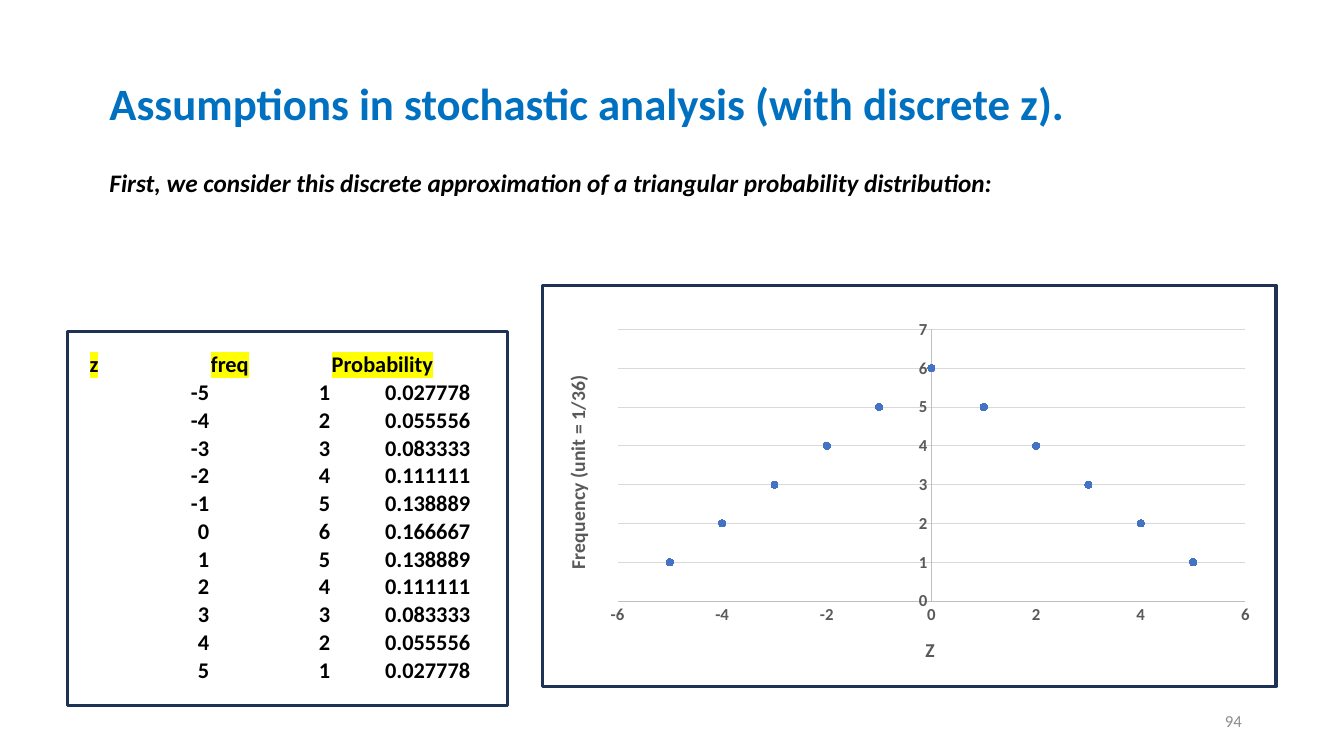
"""Build a slide showing a discrete triangular distribution as a table and a scatter chart."""
from dataclasses import dataclass

from lxml import etree
from pptx import Presentation
from pptx.chart.data import XyChartData
from pptx.dml.color import RGBColor
from pptx.enum.chart import XL_CHART_TYPE, XL_MARKER_STYLE, XL_TICK_MARK
from pptx.enum.shapes import MSO_SHAPE
from pptx.enum.text import MSO_ANCHOR, PP_ALIGN
from pptx.oxml.ns import qn
from pptx.slide import Slide
from pptx.util import Cm, Pt

SCATTER = XL_CHART_TYPE.XY_SCATTER
CIRCLE = XL_MARKER_STYLE.CIRCLE
NO_TICK = XL_TICK_MARK.NONE
RECTANGLE = MSO_SHAPE.RECTANGLE
TOP, MIDDLE, BOTTOM = MSO_ANCHOR.TOP, MSO_ANCHOR.MIDDLE, MSO_ANCHOR.BOTTOM
LEFT, RIGHT = PP_ALIGN.LEFT, PP_ALIGN.RIGHT

FONT = "Calibri"
COLORS = {
    "title": "0070C0",
    "text": "000000",
    "page": "8C8C8C",
    "highlight": "FFFF00",
    "frame": "1E3256",
    "axis_text": "595959",
    "axis_line": "BFBFBF",
    "grid": "D9D9D9",
    "point": "4472C4",
}
OUTCOMES = range(-5, 6)
FREQUENCIES = [6 - abs(z) for z in OUTCOMES]
HEADERS = ("z", "freq", "Probability")
COLUMN_WIDTHS = (3.05, 3.05, 3.53)
ROW_HEIGHT = 0.7


@dataclass(frozen=True)
class Box:
    left: float
    top: float
    width: float
    height: float

    def lengths(self) -> tuple[Cm, Cm, Cm, Cm]:
        return Cm(self.left), Cm(self.top), Cm(self.width), Cm(self.height)


@dataclass(frozen=True)
class Caption:
    text: str
    box: Box
    size: int
    color: str
    bold: bool = True
    italic: bool = False
    align: PP_ALIGN = LEFT
    anchor: MSO_ANCHOR = TOP
    wrap: bool = True


@dataclass(frozen=True)
class AxisStyle:
    title: str
    low: int
    high: int
    step: int


CAPTIONS = (
    Caption("94", Box(23.93, 17.65, 7.62, 1.02), 12, "page",
            bold=False, align=RIGHT, anchor=MIDDLE),
    Caption("Assumptions in stochastic analysis (with discrete z).",
            Box(2.51, 1.78, 26.8, 1.63), 32, "title"),
    Caption("First, we consider this discrete approximation of a triangular "
            "probability distribution:",
            Box(2.51, 4.09, 23.16, 1.02), 18, "text", italic=True, wrap=False),
)
TABLE_BOX = Box(2.24, 8.84, sum(COLUMN_WIDTHS), ROW_HEIGHT * 12)
CHART_BOX = Box(13.67, 7.85, 18.19, 9.42)
FRAMES = (Box(1.7, 8.36, 11.1, 9.42), Box(13.67, 7.19, 18.49, 10.11))
PLOT_LAYOUT = {"x": 0.104, "y": 0.048, "w": 0.87, "h": 0.727}
Z_AXIS = AxisStyle("Z", -6, 6, 2)
FREQUENCY_AXIS = AxisStyle("Frequency (unit = 1/36)", 0, 7, 1)


def rgb(name: str) -> RGBColor:
    return RGBColor.from_string(COLORS[name])


def style_font(font, size: int, color: str, bold: bool = True, italic: bool = False) -> None:
    font.name = FONT
    font.size = Pt(size)
    font.bold = bold
    font.italic = italic
    font.color.rgb = rgb(color)


def add_caption(slide: Slide, caption: Caption) -> None:
    frame = slide.shapes.add_textbox(*caption.box.lengths()).text_frame
    frame.word_wrap = caption.wrap
    frame.vertical_anchor = caption.anchor
    paragraph = frame.paragraphs[0]
    paragraph.alignment = caption.align
    run = paragraph.add_run()
    run.text = caption.text
    style_font(run.font, caption.size, caption.color, caption.bold, caption.italic)


def highlight(run) -> None:
    mark = etree.Element(qn("a:highlight"))
    etree.SubElement(mark, qn("a:srgbClr"), val=COLORS["highlight"])
    run.font._element.find(qn("a:solidFill")).addnext(mark)


def fill_cell(cell, text: str, is_header: bool) -> None:
    cell.fill.background()
    cell.vertical_anchor = BOTTOM
    cell.margin_left = cell.margin_right = cell.margin_top = Cm(0.02)
    cell.margin_bottom = Cm(0)
    paragraph = cell.text_frame.paragraphs[0]
    paragraph.alignment = LEFT if is_header else RIGHT
    run = paragraph.add_run()
    run.text = text
    style_font(run.font, 16, "text")
    if is_header:
        highlight(run)


def add_distribution_table(slide: Slide) -> None:
    total = sum(FREQUENCIES)
    rows = [HEADERS] + [(str(z), str(freq), f"{freq / total:.6f}")
                        for z, freq in zip(OUTCOMES, FREQUENCIES)]
    table = slide.shapes.add_table(len(rows), len(HEADERS), *TABLE_BOX.lengths()).table
    table.first_row = table.horz_banding = False
    for column, width in zip(table.columns, COLUMN_WIDTHS):
        column.width = Cm(width)
    for row_index, values in enumerate(rows):
        table.rows[row_index].height = Cm(ROW_HEIGHT)
        for column_index, value in enumerate(values):
            fill_cell(table.cell(row_index, column_index), value, row_index == 0)


def style_axis(axis, style: AxisStyle) -> None:
    axis.minimum_scale, axis.maximum_scale = style.low, style.high
    axis.major_unit = style.step
    axis.major_tick_mark = axis.minor_tick_mark = NO_TICK
    style_font(axis.tick_labels.font, 12, "axis_text")
    axis.format.line.color.rgb = rgb("axis_line")
    axis.format.line.width = Pt(0.75)
    run = axis.axis_title.text_frame.paragraphs[0].add_run()
    run.text = style.title
    style_font(run.font, 14, "axis_text")


def place_plot(chart) -> None:
    plot_area = chart._chartSpace.chart.plotArea
    for old_layout in plot_area.findall(qn("c:layout")):
        plot_area.remove(old_layout)
    layout = etree.Element(qn("c:layout"))
    manual = etree.SubElement(layout, qn("c:manualLayout"))
    settings = {"layoutTarget": "inner", "xMode": "edge", "yMode": "edge", **PLOT_LAYOUT}
    for tag, value in settings.items():
        etree.SubElement(manual, qn(f"c:{tag}"), val=str(value))
    plot_area.insert(0, layout)


def add_frequency_chart(slide: Slide) -> None:
    data = XyChartData()
    points = data.add_series("Series 1")
    for z, freq in zip(OUTCOMES, FREQUENCIES):
        points.add_data_point(z, freq)
    chart = slide.shapes.add_chart(SCATTER, *CHART_BOX.lengths(), data).chart
    chart.has_legend = chart.has_title = False
    style_font(chart.font, 10, "text", bold=False)
    chart.plots[0].vary_by_categories = False
    series = chart.plots[0].series[0]
    series.smooth = False
    series.format.line.fill.background()
    series.marker.style, series.marker.size = CIRCLE, 5
    series.marker.format.fill.solid()
    series.marker.format.fill.fore_color.rgb = rgb("point")
    series.marker.format.line.color.rgb = rgb("point")
    style_axis(chart.category_axis, Z_AXIS)
    style_axis(chart.value_axis, FREQUENCY_AXIS)
    chart.category_axis.has_major_gridlines = False
    grid_line = chart.value_axis.major_gridlines.format.line
    grid_line.color.rgb = rgb("grid")
    grid_line.width = Pt(0.75)
    place_plot(chart)


def add_frame(slide: Slide, box: Box) -> None:
    frame = slide.shapes.add_shape(RECTANGLE, *box.lengths())
    frame.shadow.inherit = False
    frame.fill.background()
    frame.line.color.rgb = rgb("frame")
    frame.line.width = Pt(2.25)


def main() -> None:
    deck = Presentation()
    deck.slide_width, deck.slide_height = Cm(33.87), Cm(19.05)
    slide = deck.slides.add_slide(deck.slide_layouts[6])
    for caption in CAPTIONS:
        add_caption(slide, caption)
    add_distribution_table(slide)
    add_frequency_chart(slide)
    for box in FRAMES:
        add_frame(slide, box)
    deck.save("out.pptx")


if __name__ == "__main__":
    main()
